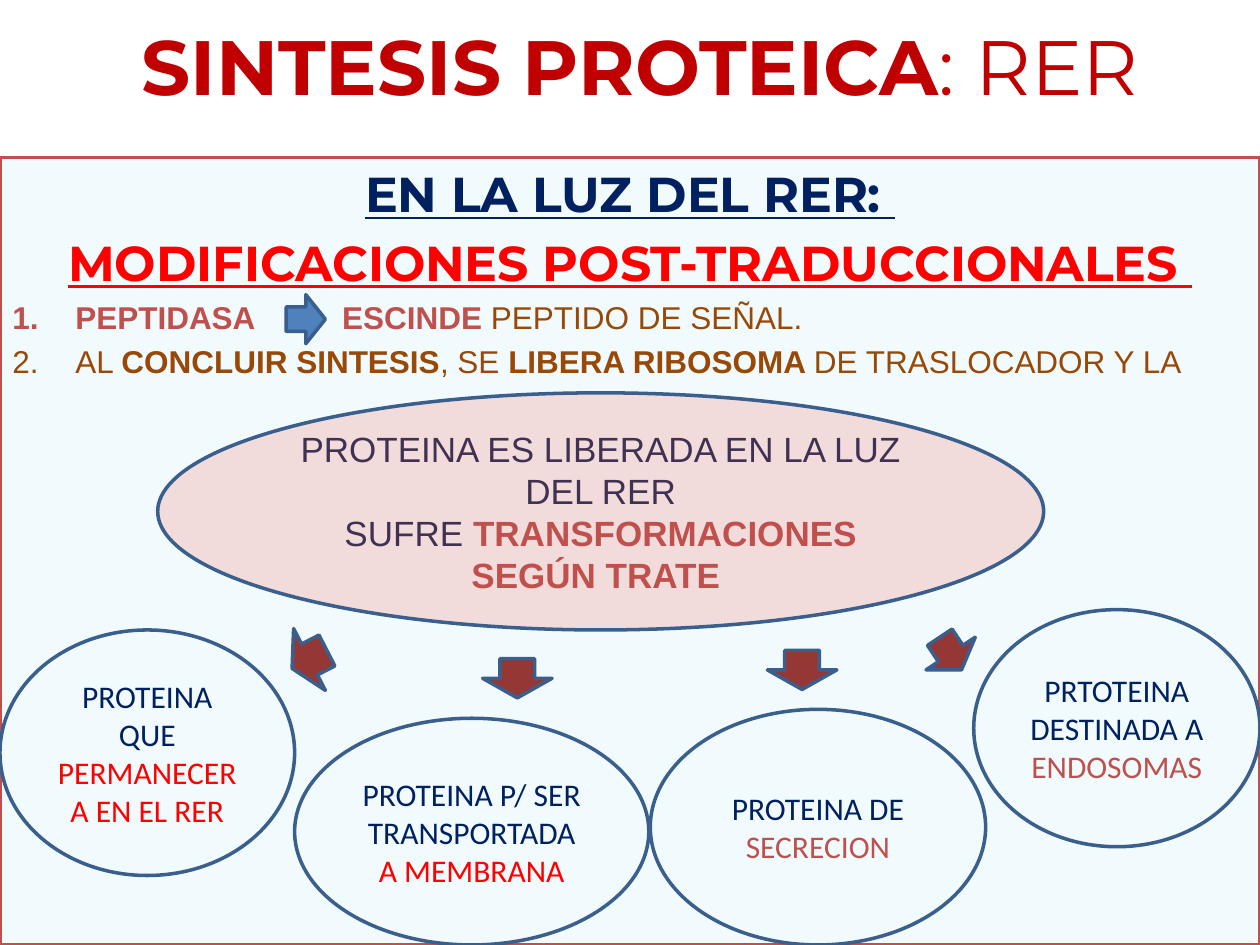
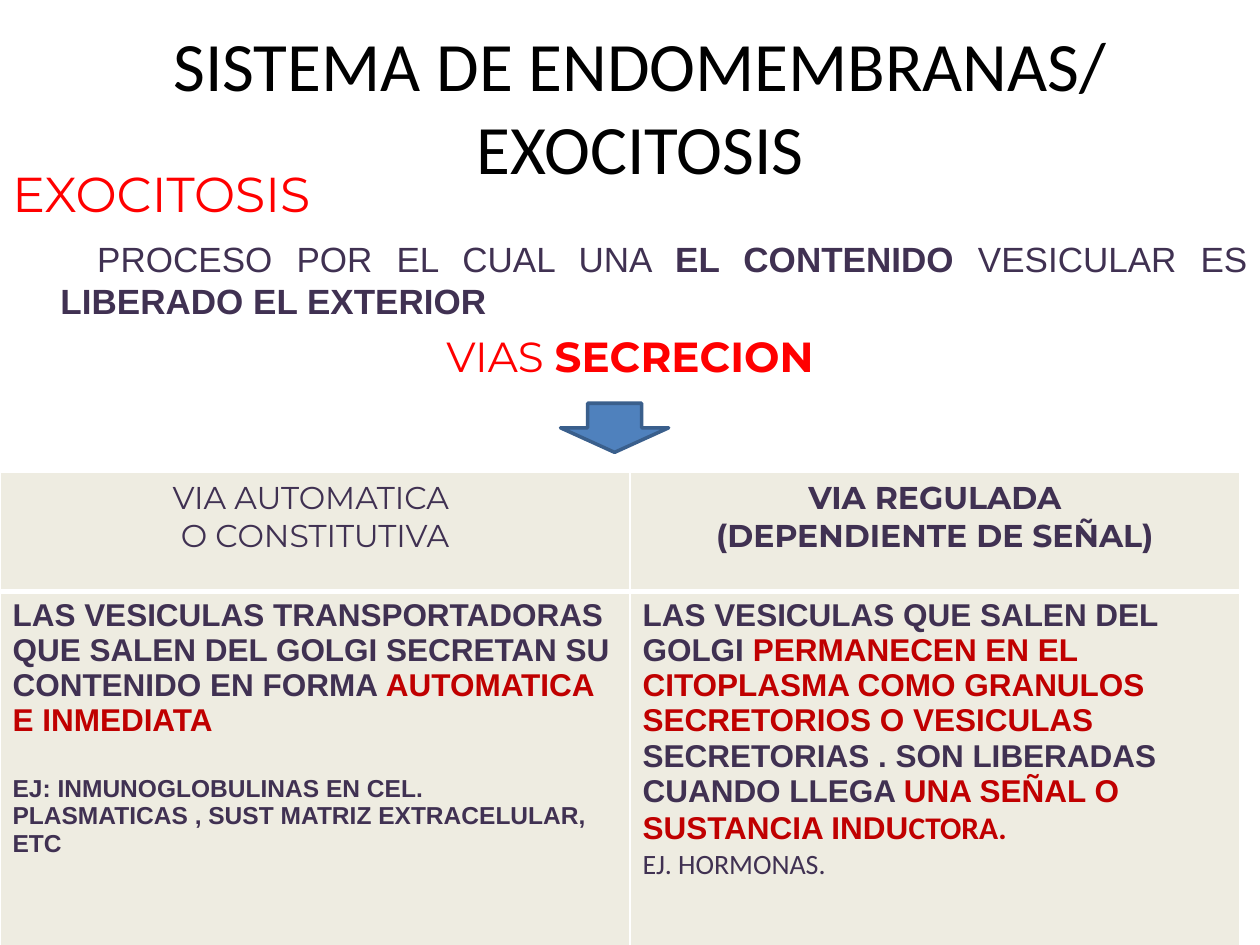
from typing import NamedTuple

from lxml import etree
from pptx import Presentation
from pptx.dml.color import RGBColor
from pptx.enum.shapes import MSO_SHAPE
from pptx.enum.text import MSO_ANCHOR, MSO_AUTO_SIZE, PP_ALIGN
from pptx.oxml.ns import qn
from pptx.util import Cm, Pt

LEFT, CENTER, JUSTIFY = PP_ALIGN.LEFT, PP_ALIGN.CENTER, PP_ALIGN.JUSTIFY
TOP, MIDDLE = MSO_ANCHOR.TOP, MSO_ANCHOR.MIDDLE
RECTANGLE, OVAL = MSO_SHAPE.RECTANGLE, MSO_SHAPE.OVAL
DOWN_ARROW, RIGHT_ARROW = MSO_SHAPE.DOWN_ARROW, MSO_SHAPE.RIGHT_ARROW
NO_AUTO_SIZE = MSO_AUTO_SIZE.NONE

HEADING, BODY, LABEL = "Montserrat", "Arial", "Calibri"
BLACK, WHITE, RED, DARK_RED, BRICK = "000000", "FFFFFF", "FF0000", "C00000", "C0504D"
NAVY, PURPLE, BROWN, OUTLINE = "002060", "403152", "984807", "3A5F8C"
PALE_BLUE, PINK, BEIGE, BLUE, MAROON = "F1FBFD", "F2DCDB", "EEECE1", "4F81BD", "953735"


class Run(NamedTuple):
    """A stretch of text with one format."""
    text: str
    color: str
    size: float = 18
    font: str = BODY
    bold: bool = False
    underline: bool = False


class Line(NamedTuple):
    """A paragraph: its runs, alignment, spacing, indents and numbering."""
    runs: list[Run]
    align: PP_ALIGN = CENTER
    before: float = 0
    margin: float = 0
    indent: float = 0
    numbered: bool = False
    tab: float = 0


class Box(NamedTuple):
    """A place on the slide in centimetres."""
    left: float
    top: float
    width: float
    height: float


class Arrow(NamedTuple):
    """A block arrow and its rotation."""
    box: Box
    rotation: float = 0
    kind: MSO_SHAPE = DOWN_ARROW
    fill: str = MAROON


class Destination(NamedTuple):
    """An oval naming where a protein goes."""
    box: Box
    text: str
    target: str
    target_color: str


BODY_BOX = Box(0, 3.18, 25.4, 15.87)


def rgb(color: str) -> RGBColor:
    """Turn a hex string into a colour."""
    return RGBColor.from_string(color)


def add_text(paragraph, text: str, *, color: str, size: float, font: str,
             bold: bool, underline: bool) -> None:
    """Append formatted text to a paragraph."""
    run = paragraph.add_run()
    run.text = text
    run.font.name, run.font.size = font, Pt(size)
    run.font.bold, run.font.underline = bold, underline
    run.font.color.rgb = rgb(color)


def format_paragraph(paragraph, line: Line) -> None:
    """Set alignment, spacing, indents, numbering and tab stop."""
    paragraph.alignment = line.align
    paragraph.space_before = Pt(line.before)
    properties = paragraph._p.get_or_add_pPr()
    properties.set("marL", str(Cm(line.margin)))
    properties.set("indent", str(Cm(line.indent)))
    if line.numbered:
        etree.SubElement(properties, qn("a:buAutoNum"), type="arabicPeriod")
    else:
        etree.SubElement(properties, qn("a:buNone"))
    if line.tab:
        tabs = etree.SubElement(properties, qn("a:tabLst"))
        etree.SubElement(tabs, qn("a:tab"), pos=str(Cm(line.tab)), algn="l")


def write_lines(frame, lines: list[Line], anchor: MSO_ANCHOR = TOP) -> None:
    """Fill a text frame with paragraphs."""
    frame.word_wrap = True
    frame.vertical_anchor = anchor
    for index, line in enumerate(lines):
        paragraph = frame.add_paragraph() if index else frame.paragraphs[0]
        format_paragraph(paragraph, line)
        for run in line.runs:
            add_text(paragraph, **run._asdict())


def lengths(box: Box) -> list[Cm]:
    """Convert a box to slide lengths."""
    return [Cm(value) for value in box]


def add_titled_slide(presentation, box: Box, runs: list[Run]):
    """Add a title-only slide and format its title."""
    slide = presentation.slides.add_slide(presentation.slide_layouts[5])
    title = slide.shapes.title
    title.left, title.top, title.width, title.height = lengths(box)
    write_lines(title.text_frame, [Line(runs)], MIDDLE)
    title.text_frame.auto_size = NO_AUTO_SIZE
    return slide


def draw_shape(slide, kind: MSO_SHAPE, box: Box, fill: str, outline: str = OUTLINE):
    """Draw a filled and outlined preset shape."""
    shape = slide.shapes.add_shape(kind, *lengths(box))
    shape.shadow.inherit = False
    shape.fill.solid()
    shape.fill.fore_color.rgb = rgb(fill)
    shape.line.color.rgb = rgb(outline)
    shape.line.width = Pt(2)
    return shape


def draw_arrow(slide, arrow: Arrow) -> None:
    """Draw a block arrow."""
    draw_shape(slide, arrow.kind, arrow.box, arrow.fill).rotation = arrow.rotation


def draw_destination(slide, destination: Destination) -> None:
    """Draw an oval with its protein destination."""
    oval = draw_shape(slide, OVAL, destination.box, PALE_BLUE)
    runs = [Run(destination.text, NAVY, font=LABEL),
            Run(destination.target, destination.target_color, font=LABEL)]
    write_lines(oval.text_frame, [Line(runs)], MIDDLE)


def fill_cell(cell, lines: list[Line], bottom_width: float) -> None:
    """Write a table cell with white borders and a beige fill."""
    write_lines(cell.text_frame, lines)
    properties = cell._tc.get_or_add_tcPr()
    for side, width in (("L", 1), ("R", 1), ("T", 1), ("B", bottom_width)):
        border = etree.SubElement(properties, qn(f"a:ln{side}"), w=str(Pt(width)))
        fill = etree.SubElement(border, qn("a:solidFill"))
        etree.SubElement(fill, qn("a:srgbClr"), val=WHITE)
    cell.fill.solid()
    cell.fill.fore_color.rgb = rgb(BEIGE)


def build_synthesis_slide(presentation) -> None:
    """Build the slide on protein synthesis in the RER."""
    slide = add_titled_slide(presentation, Box(0.84, 0, 24.13, 2.59), [
        Run("SINTESIS PROTEICA", DARK_RED, 44, HEADING, True),
        Run(": RER", DARK_RED, 44, HEADING)])
    panel = draw_shape(slide, RECTANGLE, BODY_BOX, PALE_BLUE, BRICK)
    headings = [Line([Run(text, color, 28, HEADING, True, True)], before=5.6)
                for text, color in (("EN LA LUZ DEL RER: ", NAVY),
                                    ("MODIFICACIONES POST-TRADUCCIONALES ", RED))]
    steps = [
        [Run("PEPTIDASA\tESCINDE", BRICK, bold=True), Run(" PEPTIDO DE SEÑAL.", BROWN)],
        [Run("AL ", BROWN), Run("CONCLUIR SINTESIS", BROWN, bold=True),
         Run(", SE ", BROWN), Run("LIBERA RIBOSOMA ", BROWN, bold=True),
         Run("DE TRASLOCADOR Y LA", BROWN)]]
    write_lines(panel.text_frame, headings + [
        Line(runs, LEFT, 3.6, 1.27, -1.27, True, 6.65) for runs in steps])

    protein = draw_shape(slide, OVAL, Box(3.18, 7.92, 17.86, 4.78), PINK)
    write_lines(protein.text_frame, [
        Line([Run("PROTEINA ES LIBERADA EN LA LUZ DEL RER", PURPLE, 20)]),
        Line([Run("SUFRE ", PURPLE, 20),
              Run("TRANSFORMACIONES SEGÚN TRATE ", BRICK, 20, bold=True)])], MIDDLE)

    for arrow in (Arrow(Box(5.54, 12.9, 1.4, 0.79), 62.8),
                  Arrow(Box(9.73, 13.28, 1.4, 0.79)),
                  Arrow(Box(15.47, 13.11, 1.4, 0.79)),
                  Arrow(Box(18.57, 12.78, 1.19, 0.79), 326.4),
                  Arrow(Box(5.77, 5.94, 0.79, 0.99), 0, RIGHT_ARROW, BLUE)):
        draw_arrow(slide, arrow)
    for destination in (
            Destination(Box(0, 12.7, 5.94, 4.95), "PROTEINA QUE ",
                        "PERMANECERA EN EL RER", RED),
            Destination(Box(5.94, 14.48, 7.14, 4.57), "PROTEINA P/ SER TRANSPORTADA ",
                        "A MEMBRANA", RED),
            Destination(Box(13.11, 14.3, 6.76, 4.75), "PROTEINA DE ", "SECRECION", BRICK),
            Destination(Box(19.63, 12.29, 5.77, 4.78), "PRTOTEINA DESTINADA A ",
                        "ENDOSOMAS", BRICK)):
        draw_destination(slide, destination)


def build_exocytosis_slide(presentation) -> None:
    """Build the slide on exocytosis and its secretion pathways."""
    slide = add_titled_slide(presentation, Box(0.84, 1.27, 24.13, 1.7), [
        Run("SISTEMA DE ENDOMEMBRANAS/ EXOCITOSIS", BLACK, 39.6, LABEL)])
    body = slide.shapes.add_textbox(*lengths(BODY_BOX))
    write_lines(body.text_frame, [
        Line([Run("EXOCITOSIS", RED, 28, HEADING)], LEFT, 5.6),
        Line([Run("PROCESO POR EL CUAL UNA ", PURPLE, 20),
              Run("EL CONTENIDO", PURPLE, 20, bold=True),
              Run(" VESICULAR ES ", PURPLE, 20),
              Run("LIBERADO EL EXTERIOR", PURPLE, 20, bold=True)],
             JUSTIFY, 8.5, 0.97, 0.74),
        Line([Run("VIAS ", RED, 24, HEADING),
              Run("SECRECION", RED, 24, HEADING, True)], before=4.8)])
    draw_arrow(slide, Arrow(Box(11.3, 8.13, 2.18, 0.99), fill=BLUE))

    columns, rows = (12.7, 12.29), (2.39, 7.14)
    table = slide.shapes.add_table(
        2, 2, *lengths(Box(0, 9.53, sum(columns), sum(rows)))).table
    for column, width in zip(table.columns, columns):
        column.width = Cm(width)
    for row, height in zip(table.rows, rows):
        row.height = Cm(height)
    headers = [
        [Line([Run(text, PURPLE, 18, HEADING, bold)]) for text in texts]
        for texts, bold in ((("VIA AUTOMATICA ", "O CONSTITUTIVA"), False),
                            (("VIA REGULADA", "(DEPENDIENTE DE SEÑAL)"), True))]
    pathways = [
        [Line([Run("LAS VESICULAS TRANSPORTADORAS QUE SALEN DEL GOLGI SECRETAN "
                   "SU CONTENIDO EN FORMA ", PURPLE, bold=True),
               Run("AUTOMATICA E INMEDIATA", DARK_RED, bold=True)], LEFT),
         Line([Run("EJ: INMUNOGLOBULINAS EN CEL. PLASMATICAS , SUST MATRIZ "
                   "EXTRACELULAR, ETC", PURPLE, 14, bold=True)], LEFT, 20.7)],
        [Line([Run("LAS VESICULAS QUE SALEN DEL GOLGI ", PURPLE, bold=True),
               Run("PERMANECEN EN EL CITOPLASMA COMO GRANULOS SECRETORIOS O "
                   "VESICULAS ", DARK_RED, bold=True),
               Run("SECRETORIAS . SON LIBERADAS CUANDO LLEGA ", PURPLE, bold=True),
               Run("UNA SEÑAL O SUSTANCIA INDU", DARK_RED, bold=True),
               Run("CTORA.", DARK_RED, 18, LABEL, True)], LEFT),
         Line([Run("EJ. HORMONAS.", PURPLE, 16, LABEL)], LEFT)]]
    for row, (contents, bottom_width) in enumerate(((headers, 3), (pathways, 1))):
        for column, lines in enumerate(contents):
            fill_cell(table.cell(row, column), lines, bottom_width)


def main() -> None:
    """Build and save the presentation."""
    presentation = Presentation()
    presentation.slide_width, presentation.slide_height = Cm(25.4), Cm(19.05)
    build_synthesis_slide(presentation)
    build_exocytosis_slide(presentation)
    presentation.save("out.pptx")


if __name__ == "__main__":
    main()
